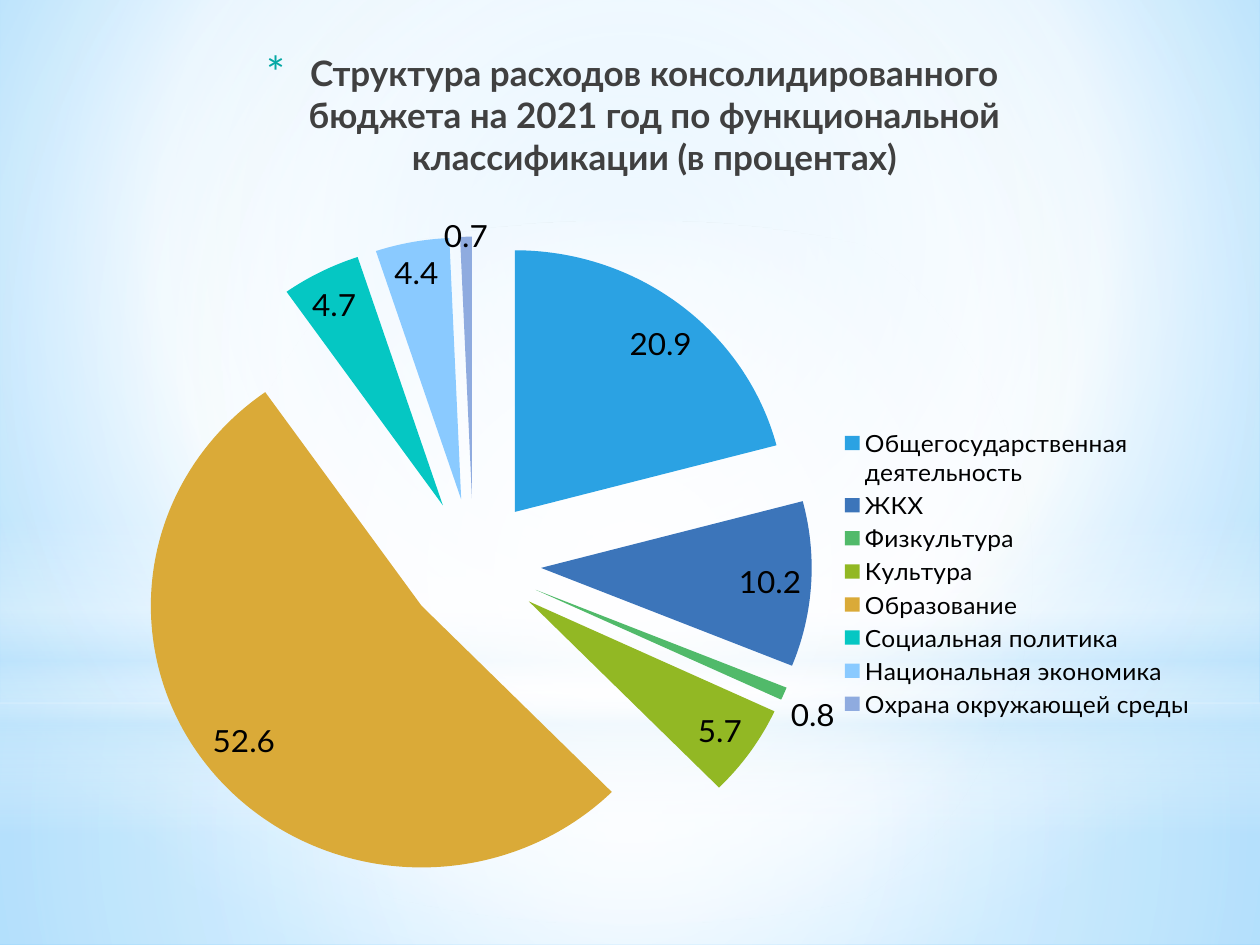
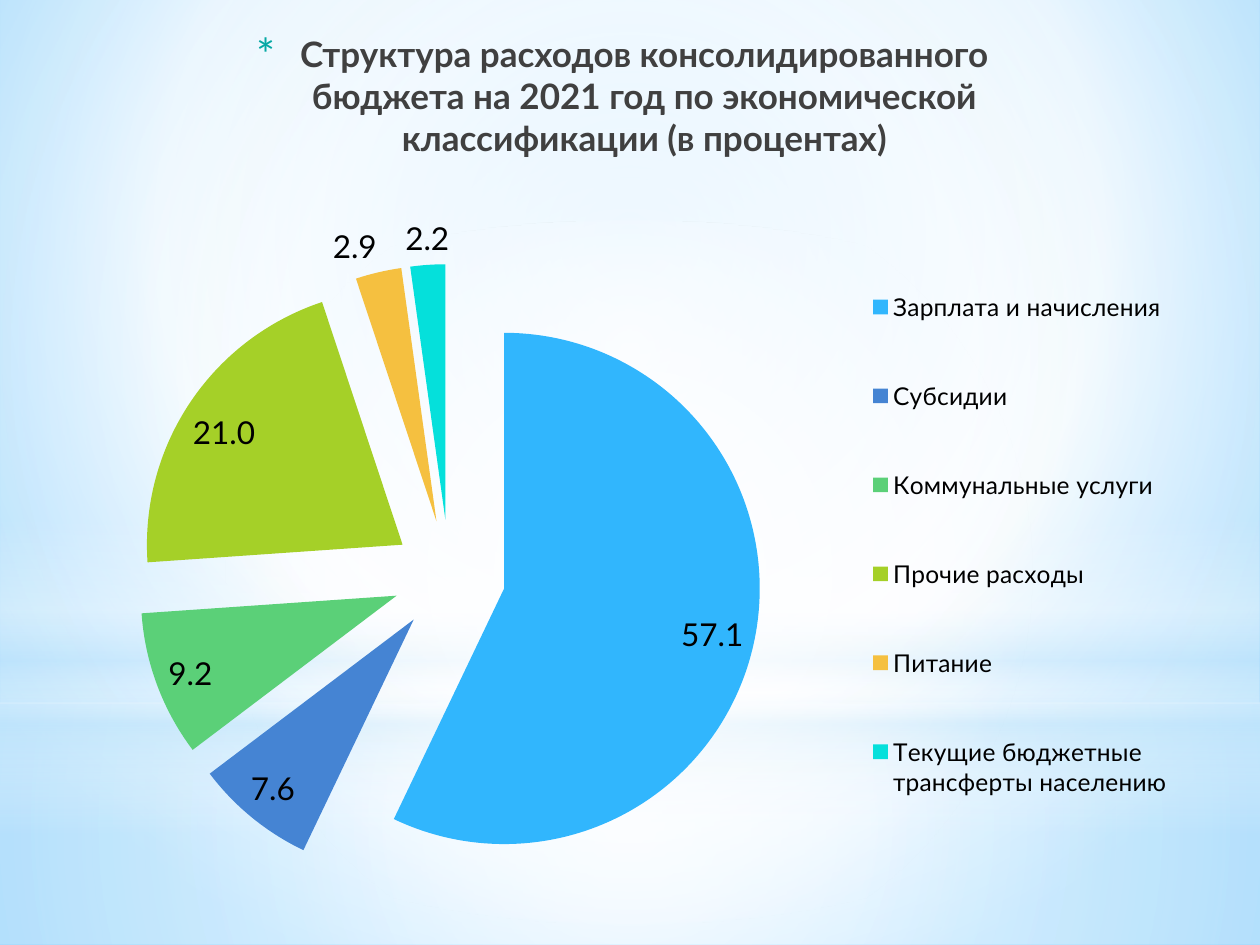
from dataclasses import dataclass
from typing import NamedTuple, Optional

from pptx import Presentation, util as u
from pptx.chart.data import CategoryChartData
from pptx.dml.color import RGBColor
from pptx.enum import chart as chart_enum, shapes, text
from pptx.oxml import parse_xml
from pptx.oxml.ns import nsdecls, qn

FONT = "Lato"
SLIDE_WIDTH, SLIDE_HEIGHT = u.Inches(10), u.Inches(7.5)

WHITE = RGBColor(0xFF, 0xFF, 0xFF)
BLACK = RGBColor(0x00, 0x00, 0x00)
TITLE_GREY = RGBColor(0x40, 0x40, 0x40)
BULLET_TEAL = RGBColor(0x04, 0xA8, 0xA4)
PALE_BLUE = RGBColor(0xC6, 0xE7, 0xFC)
SKY_BLUE = RGBColor(0xB0, 0xE0, 0xFF)
DEEP_SKY = RGBColor(0x6B, 0xC5, 0xFF)

BRIGHT_SLICES = (
    RGBColor(0x31, 0xB6, 0xFD), RGBColor(0x45, 0x84, 0xD3),
    RGBColor(0x5B, 0xD0, 0x78), RGBColor(0xA5, 0xD0, 0x28),
    RGBColor(0xF5, 0xC0, 0x40), RGBColor(0x05, 0xE0, 0xDB),
)
DEEP_SLICES = (
    RGBColor(0x2B, 0xA2, 0xE3), RGBColor(0x3C, 0x75, 0xBA),
    RGBColor(0x51, 0xBA, 0x6A), RGBColor(0x92, 0xB8, 0x24),
    RGBColor(0xDA, 0xAA, 0x38), RGBColor(0x05, 0xC7, 0xC3),
    RGBColor(0x8A, 0xCA, 0xFF), RGBColor(0x8F, 0xAB, 0xDF),
)


class Box(NamedTuple):
    """A rectangle in percent of the slide or chart that holds it."""
    left: float
    top: float
    width: float
    height: float

    def on_slide(self) -> tuple[int, ...]:
        sides = (SLIDE_WIDTH, SLIDE_HEIGHT, SLIDE_WIDTH, SLIDE_HEIGHT)
        return tuple(round(share * side / 100) for share, side in zip(self, sides))


class Stop(NamedTuple):
    position: int
    color: RGBColor
    alpha: int = 100


@dataclass(frozen=True)
class Glow:
    """A gradient: linear when angle is given, else circular around focus."""
    stops: tuple[Stop, ...]
    focus: tuple[int, int, int, int] = (50, 50, 50, 50)
    angle: Optional[int] = None


@dataclass(frozen=True)
class Band:
    box: Box
    glow: Glow
    kind: shapes.MSO_SHAPE = shapes.MSO_SHAPE.RECTANGLE


@dataclass(frozen=True)
class BudgetPie:
    classification: str
    title_box: Box
    chart_box: Box
    plot_box: Box
    legend_box: Box
    explosion: int
    colors: tuple[RGBColor, ...]
    shares: dict[str, float]


BACKGROUND = Glow((Stop(0, SKY_BLUE), Stop(60, WHITE), Stop(100, DEEP_SKY)),
                  focus=(20, 10, 20, 60))
BANDS = (
    Band(Box(0, 74.4, 100, 25.6),
         Glow((Stop(0, WHITE, 91), Stop(37, WHITE, 76), Stop(100, PALE_BLUE, 79)))),
    Band(Box(0, 0, 100, 74.4),
         Glow((Stop(0, WHITE, 89), Stop(48, WHITE, 62), Stop(100, PALE_BLUE, 79)))),
    Band(Box(0, 54.93, 100, 33.33),
         Glow((Stop(0, WHITE, 0), Stop(29, WHITE, 30), Stop(45, PALE_BLUE, 40),
               Stop(55, WHITE, 26), Stop(65, PALE_BLUE, 60), Stop(100, WHITE, 0)),
              angle=90)),
    Band(Box(0, 23.33, 100, 74.4), Glow((Stop(0, WHITE), Stop(56, WHITE, 0))),
         shapes.MSO_SHAPE.OVAL),
)

PIES = (
    BudgetPie(
        classification="функциональной",
        title_box=Box(14.6, 4.8, 71.2, 16.67),
        chart_box=Box(5.1, 20.4, 90.6, 75.87),
        plot_box=Box(6.2, 2.9, 59.3, 94.4),
        legend_box=Box(67.5, 30, 32, 43),
        explosion=25,
        colors=DEEP_SLICES,
        shares={
            "Общегосударственная деятельность": 20.9,
            "ЖКХ": 10.2,
            "Физкультура": 0.8,
            "Культура": 5.7,
            "Образование": 52.6,
            "Социальная политика": 4.7,
            "Национальная экономика": 4.4,
            "Охрана окружающей среды": 0.7,
        },
    ),
    BudgetPie(
        classification="экономической",
        title_box=Box(13.8, 2.8, 71.2, 16.67),
        chart_box=Box(3.5, 18.53, 90.6, 76.67),
        plot_box=Box(1, 12.3, 69, 86.1),
        legend_box=Box(72, 8, 27, 86),
        explosion=22,
        colors=BRIGHT_SLICES,
        shares={
            "Зарплата и начисления": 57.1,
            "Субсидии": 7.6,
            "Коммунальные услуги": 9.2,
            "Прочие расходы": 21.0,
            "Питание": 2.9,
            "Текущие бюджетные трансферты населению": 2.2,
        },
    ),
)


def gradient_xml(glow: Glow) -> str:
    stops = "".join(
        f'<a:gs pos="{stop.position * 1000}"><a:srgbClr val="{stop.color}">'
        f'<a:alpha val="{stop.alpha * 1000}"/></a:srgbClr></a:gs>'
        for stop in glow.stops)
    if glow.angle is None:
        sides = " ".join(f'{side}="{share * 1000}"' for side, share in zip("ltrb", glow.focus))
        direction = f'<a:path path="circle"><a:fillToRect {sides}/></a:path>'
    else:
        direction = f'<a:lin ang="{glow.angle * 60000}" scaled="0"/>'
    return (f'<a:gradFill {nsdecls("a")} rotWithShape="1">'
            f'<a:gsLst>{stops}</a:gsLst>{direction}</a:gradFill>')


def decorate_layout(layout, slide) -> None:
    """Give the layout its background and bands; the slide only hosts their creation."""
    layout.element.cSld.insert(0, parse_xml(
        f'<p:bg {nsdecls("p", "a")}><p:bgPr>{gradient_xml(BACKGROUND)}'
        '<a:effectLst/></p:bgPr></p:bg>'))
    for index, band in enumerate(BANDS):
        shape = slide.shapes.add_shape(band.kind, *band.box.on_slide())
        shape.shadow.inherit = False
        shape.line.fill.background()
        shape.fill.background()
        properties = shape.element.spPr
        properties.replace(properties.find(qn("a:noFill")),
                           parse_xml(gradient_xml(band.glow)))
        shape.element.nvSpPr.cNvPr.set("id", str(100 + index))
        layout.shapes.element.insert(2 + index, shape.element)


def set_font(font, size: float, color: RGBColor, bold: bool = False) -> None:
    font.name, font.size, font.bold = FONT, u.Pt(size), bold
    font.color.rgb = color


def write_text(frame, content: str, *, size: float, color: RGBColor, bold: bool = False,
               alignment=text.PP_ALIGN.LEFT, anchor=text.MSO_ANCHOR.TOP):
    frame.word_wrap = True
    frame.auto_size = text.MSO_AUTO_SIZE.NONE
    frame.vertical_anchor = anchor
    paragraph = frame.paragraphs[0]
    paragraph.alignment = alignment
    run = paragraph.add_run()
    run.text = content
    set_font(run.font, size, color, bold)
    return paragraph


def add_star_bullet(paragraph) -> None:
    properties = paragraph._p.get_or_add_pPr()
    indent = u.Inches(0.35)
    properties.set("marL", str(indent))
    properties.set("indent", str(-indent))
    for bullet in (f'<a:buClr {nsdecls("a")}><a:srgbClr val="{BULLET_TEAL}"/></a:buClr>',
                   f'<a:buSzPct {nsdecls("a")} val="128000"/>',
                   f'<a:buFont {nsdecls("a")} typeface="{FONT}"/>',
                   f'<a:buChar {nsdecls("a")} char="*"/>'):
        properties.append(parse_xml(bullet))


def add_title(slide, pie: BudgetPie) -> None:
    title = slide.shapes.title
    title.left, title.top, title.width, title.height = pie.title_box.on_slide()
    paragraph = write_text(
        title.text_frame,
        "Структура расходов консолидированного бюджета на 2021 год "
        f"по {pie.classification} классификации (в процентах)",
        size=20, color=TITLE_GREY, bold=True, alignment=text.PP_ALIGN.CENTER)
    add_star_bullet(paragraph)


def set_chart_layout(parent, index: int, box: Box, target: str = "") -> None:
    """Place the plot area or the legend at fixed shares of its chart."""
    for layout in parent.findall(qn("c:layout")):
        parent.remove(layout)
    modes = '<c:xMode val="edge"/><c:yMode val="edge"/>'
    sizes = "".join(f'<c:{side} val="{share / 100:.3f}"/>' for side, share in zip("xywh", box))
    parent.insert(index, parse_xml(
        f'<c:layout {nsdecls("c")}><c:manualLayout>{target}{modes}{sizes}'
        '</c:manualLayout></c:layout>'))


def add_pie(slide, pie: BudgetPie) -> None:
    data = CategoryChartData(number_format="0.0")
    data.categories = list(pie.shares)
    data.add_series("Series 1", list(pie.shares.values()))
    chart = slide.shapes.add_chart(
        chart_enum.XL_CHART_TYPE.PIE, *pie.chart_box.on_slide(), data).chart
    chart.has_title = False
    set_font(chart.font, 18, BLACK)

    plot = chart.plots[0]
    plot.vary_by_categories = True
    series = plot.series[0]
    series._element.find(qn("c:tx")).addnext(
        parse_xml(f'<c:explosion {nsdecls("c")} val="{pie.explosion}"/>'))
    for index, color in enumerate(pie.colors):
        slice_format = series.points[index].format
        slice_format.fill.solid()
        slice_format.fill.fore_color.rgb = color
        slice_format.line.fill.background()

    labels = series.data_labels
    labels.show_value = True
    labels.number_format, labels.number_format_is_linked = "0.0", False
    labels.position = chart_enum.XL_LABEL_POSITION.BEST_FIT
    set_font(labels.font, 18, BLACK)

    chart.has_legend = True
    legend = chart.legend
    legend.position = chart_enum.XL_LEGEND_POSITION.RIGHT
    legend.include_in_layout = False
    set_font(legend.font, 14, BLACK)
    set_chart_layout(legend._element, 1, pie.legend_box)
    set_chart_layout(plot._element.getparent(), 0, pie.plot_box,
                     '<c:layoutTarget val="inner"/>')


def main() -> None:
    presentation = Presentation()
    presentation.slide_width, presentation.slide_height = SLIDE_WIDTH, SLIDE_HEIGHT
    title_only = presentation.slide_layouts[5]
    slides = [presentation.slides.add_slide(title_only) for _ in PIES]
    decorate_layout(title_only, slides[0])
    for slide, pie in zip(slides, PIES):
        add_title(slide, pie)
        add_pie(slide, pie)
    presentation.save("out.pptx")


if __name__ == "__main__":
    main()
